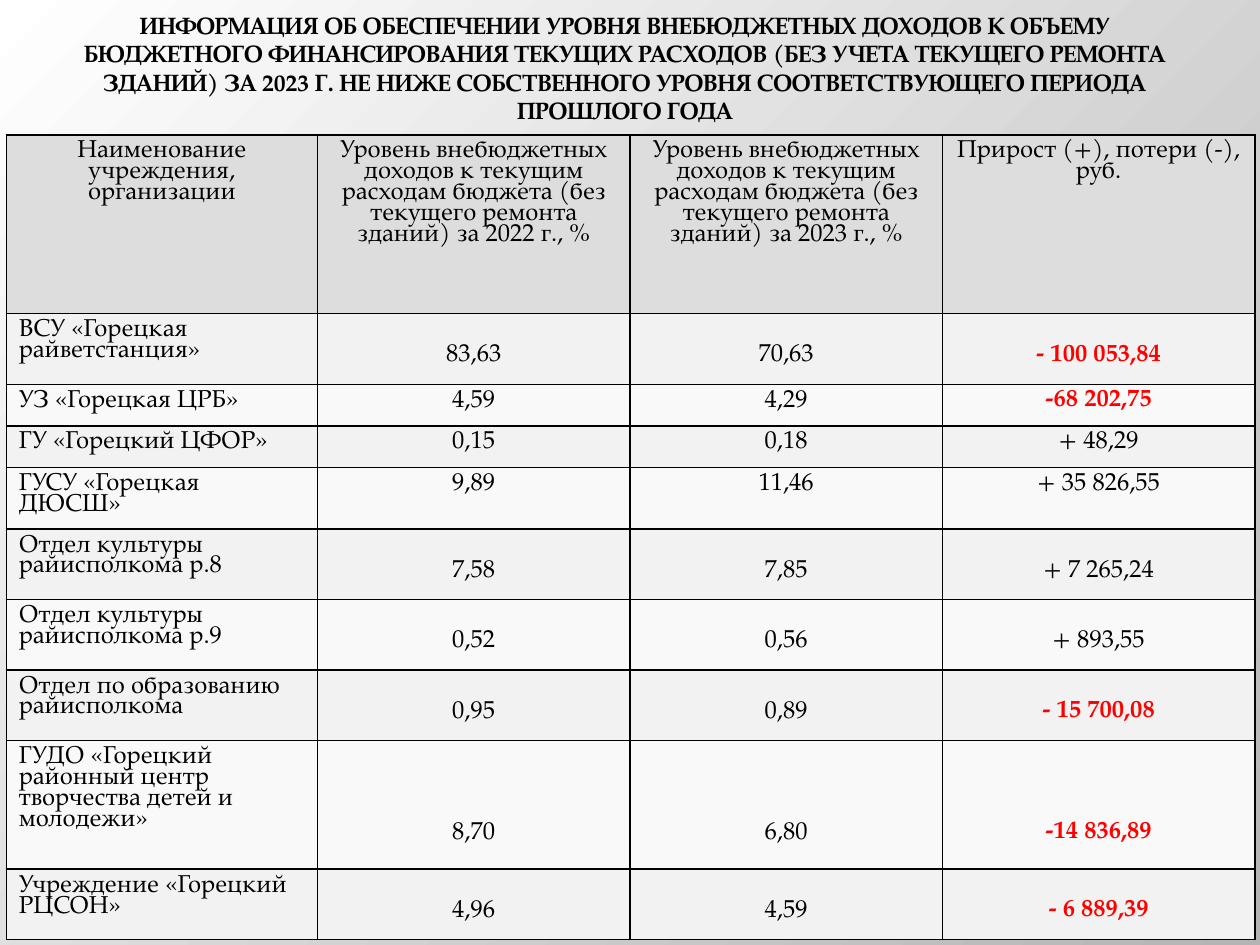
from dataclasses import dataclass

from lxml.etree import SubElement
from pptx import Presentation
from pptx.dml.color import RGBColor
from pptx.enum.text import MSO_ANCHOR, MSO_AUTO_SIZE, PP_ALIGN
from pptx.oxml.ns import qn
from pptx.util import Inches, Pt


@dataclass(frozen=True)
class Theme:
    font: str = "TeX Gyre Pagella"
    title_size: float = 13.5
    table_size: float = 14
    line_spacing: float = 0.84
    line_pitch: float = 0.2  # inches between lines of table text
    cell_margin: float = 0.05
    border_width: float = 1
    text: str = "000000"
    loss: str = "FF0000"
    header_fill: str = "DDDDDD"
    band_fills: tuple = ("F2F2F2", "F9F9F9")
    background: tuple = ("FFFFFF", "B4B4B4")


THEME = Theme()

TITLE = (
    "ИНФОРМАЦИЯ ОБ ОБЕСПЕЧЕНИИ УРОВНЯ ВНЕБЮДЖЕТНЫХ ДОХОДОВ К ОБЪЕМУ "
    "БЮДЖЕТНОГО ФИНАНСИРОВАНИЯ ТЕКУЩИХ РАСХОДОВ (БЕЗ УЧЕТА ТЕКУЩЕГО РЕМОНТА "
    "ЗДАНИЙ) ЗА 2023 Г. НЕ НИЖЕ СОБСТВЕННОГО УРОВНЯ СООТВЕТСТВУЮЩЕГО ПЕРИОДА "
    "ПРОШЛОГО ГОДА"
)
LEVEL_HEADER = (
    "Уровень внебюджетных доходов к текущим расходам бюджета "
    "(без текущего ремонта зданий) за {} г., %"
)
HEADERS = (
    "Наименование учреждения, организации",
    LEVEL_HEADER.format(2022),
    LEVEL_HEADER.format(2023),
    "Прирост (+), потери (-), руб.",
)
HEADER_HEIGHT = 1.42
COLUMN_WIDTHS = (2.47, 2.48, 2.48, 2.48)

# Row height, lines by which the figures are lowered, then the cell texts
INSTITUTIONS = (
    (0.56, 1, ("ВСУ «Горецкая райветстанция»", "83,63", "70,63", "- 100 053,84")),
    (0.33, 0, ("УЗ «Горецкая ЦРБ»", "4,59", "4,29", "-68 202,75")),
    (0.33, 0, ("ГУ «Горецкий ЦФОР»", "0,15", "0,18", "+ 48,29")),
    (0.49, 0, ("ГУСУ «Горецкая ДЮСШ»", "9,89", "11,46", "+ 35 826,55")),
    (0.56, 1, ("Отдел культуры райисполкома р.8", "7,58", "7,85", "+ 7 265,24")),
    (0.56, 1, ("Отдел культуры райисполкома р.9", "0,52", "0,56", "+ 893,55")),
    (0.56, 1, ("Отдел по образованию райисполкома", "0,95", "0,89", "- 15 700,08")),
    (1.02, 3, ("ГУДО «Горецкий районный центр творчества детей и молодежи»",
               "8,70", "6,80", "-14 836,89")),
    (0.56, 1, ("Учреждение «Горецкий РЦСОН»", "4,96", "4,59", "- 6 889,39")),
)


def apply_format(target, values):
    for name, value in values.items():
        setattr(target, name, value)


def write_text(frame, text, size, color, bold=False, **paragraph_format):
    paragraph = frame.paragraphs[0]
    apply_format(paragraph, paragraph_format)
    run = paragraph.add_run()
    run.text = text
    apply_format(run.font, {"name": THEME.font, "size": Pt(size), "bold": bold})
    run.font.color.rgb = RGBColor.from_string(color)


def paint_background(slide):
    """Radial gradient spreading from the top left corner."""
    fill = slide.background.fill
    fill.gradient()
    for stop, color in zip(fill.gradient_stops, THEME.background):
        stop.color.rgb = RGBColor.from_string(color)
    gradient = slide.element.find(".//" + qn("a:gradFill"))
    gradient.remove(gradient.find(qn("a:lin")))
    circle = SubElement(gradient, qn("a:path"), {"path": "circle"})
    SubElement(circle, qn("a:fillToRect"), {"r": "100000", "b": "100000"})


def place_title(slide):
    title = slide.shapes.title
    apply_format(title, {
        "left": Inches(0.51), "top": Inches(0),
        "width": Inches(8.9), "height": Inches(1.07),
    })
    apply_format(title.text_frame, {
        "word_wrap": True,
        "auto_size": MSO_AUTO_SIZE.NONE,
        "vertical_anchor": MSO_ANCHOR.MIDDLE,
    })
    write_text(title.text_frame, TITLE, THEME.title_size, THEME.text,
               bold=True, alignment=PP_ALIGN.CENTER)


def draw_borders(cell):
    properties = cell._tc.get_or_add_tcPr()
    for side in ("lnL", "lnR", "lnT", "lnB"):
        line = SubElement(properties, qn(f"a:{side}"),
                          {"w": str(Pt(THEME.border_width))})
        SubElement(SubElement(line, qn("a:solidFill")), qn("a:srgbClr"),
                   {"val": THEME.text})


def fill_cell(cell, text, fill, centred=True, lowered_lines=0):
    draw_borders(cell)
    cell.fill.solid()
    cell.fill.fore_color.rgb = RGBColor.from_string(fill)
    cell.margin_top = Inches(THEME.cell_margin + lowered_lines * THEME.line_pitch)
    is_loss = text.startswith("-")
    write_text(cell.text_frame, text, THEME.table_size,
               THEME.loss if is_loss else THEME.text, bold=is_loss,
               alignment=PP_ALIGN.CENTER if centred else PP_ALIGN.LEFT,
               line_spacing=THEME.line_spacing)


def add_income_table(slide):
    heights = [HEADER_HEIGHT] + [height for height, _, _ in INSTITUTIONS]
    table = slide.shapes.add_table(
        len(heights), len(HEADERS), Inches(0.05), Inches(1.07),
        Inches(sum(COLUMN_WIDTHS)), Inches(sum(heights))).table
    for column, width in zip(table.columns, COLUMN_WIDTHS):
        column.width = Inches(width)
    for row, height in zip(table.rows, heights):
        row.height = Inches(height)

    for column, header in enumerate(HEADERS):
        fill_cell(table.cell(0, column), header, THEME.header_fill)
    for index, (_, lowered_lines, texts) in enumerate(INSTITUTIONS):
        band = THEME.band_fills[index % 2]
        for column, text in enumerate(texts):
            is_figure = column > 0
            fill_cell(table.cell(index + 1, column), text, band, is_figure,
                      lowered_lines if is_figure else 0)


def main():
    presentation = Presentation()
    apply_format(presentation,
                 {"slide_width": Inches(10), "slide_height": Inches(7.5)})
    title_only = presentation.slide_layouts.get_by_name("Title Only")
    slide = presentation.slides.add_slide(title_only)
    paint_background(slide)
    place_title(slide)
    add_income_table(slide)
    presentation.save("out.pptx")


if __name__ == "__main__":
    main()
